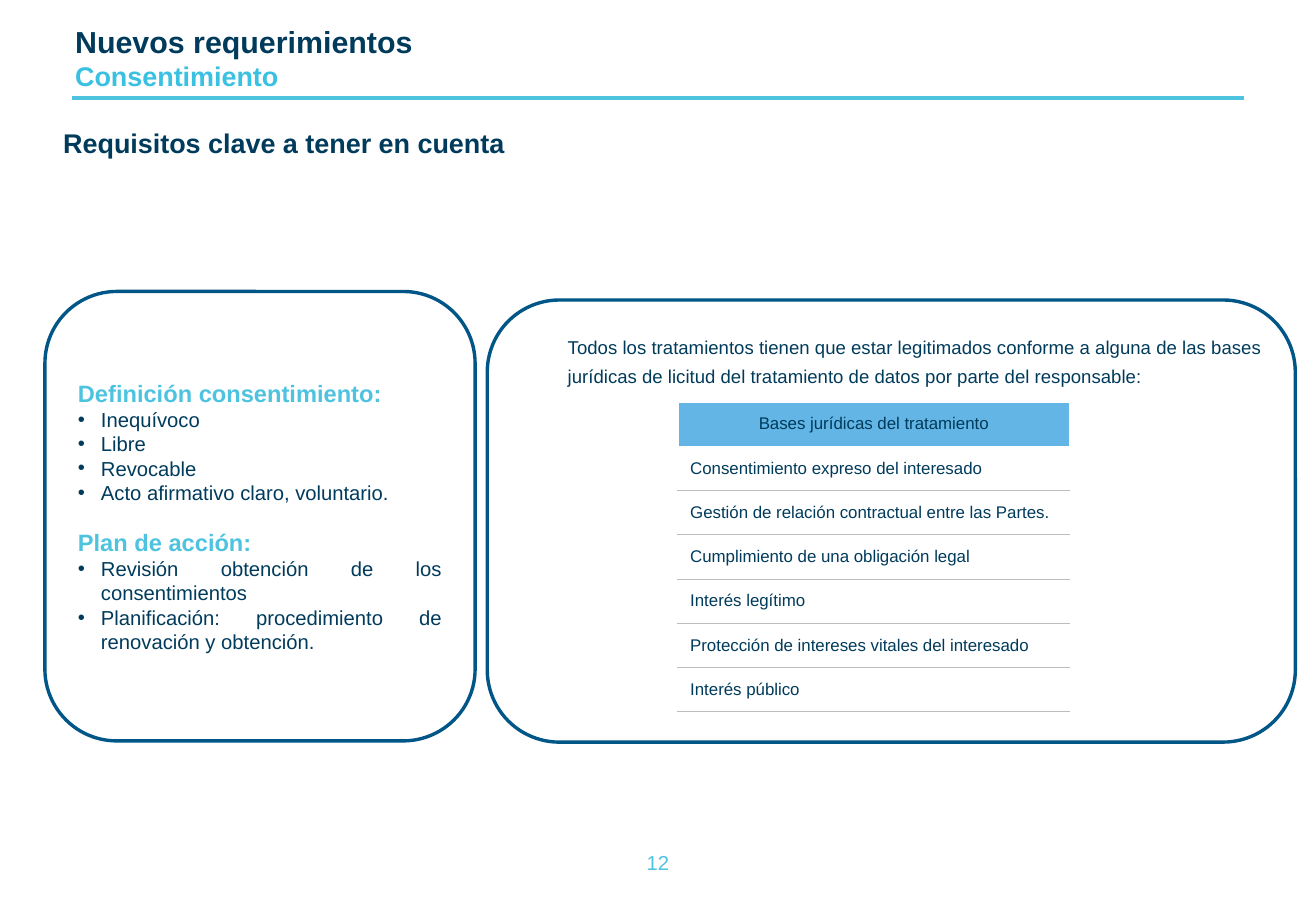
from lxml import etree
from pptx import Presentation
from pptx.dml.color import RGBColor
from pptx.enum.shapes import MSO_CONNECTOR, MSO_SHAPE
from pptx.enum.text import MSO_ANCHOR, PP_ALIGN
from pptx.oxml.ns import qn
from pptx.util import Inches, Pt

LEFT, CENTER, JUSTIFY = PP_ALIGN.LEFT, PP_ALIGN.CENTER, PP_ALIGN.JUSTIFY
TOP, MIDDLE, BOTTOM = MSO_ANCHOR.TOP, MSO_ANCHOR.MIDDLE, MSO_ANCHOR.BOTTOM
ROUND_RECT, STRAIGHT = MSO_SHAPE.ROUNDED_RECTANGLE, MSO_CONNECTOR.STRAIGHT

COLORS = {"navy": "003B5C", "cyan": "4EC3E0", "subtitle": "3AC1E1", "outline": "005686",
          "header": "62B5E5", "rule": "BBBCBC", "white": "FFFFFF"}
FONT = "Arial"


def rgb(name):
    return RGBColor.from_string(COLORS[name])


class SlideBuilder:
    def __init__(self, slide):
        self.s = slide

    def indent(self, p, left, hanging=0, bullet=None):
        pPr = p._p.get_or_add_pPr()
        pPr.set("marL", str(Inches(left)))
        pPr.set("indent", str(-Inches(hanging)))
        if bullet:
            etree.SubElement(pPr, qn("a:buFont")).set("typeface", FONT)
            etree.SubElement(pPr, qn("a:buChar")).set("char", bullet)

    def set_text(self, p, text, size, color="navy", bold=False, align=LEFT):
        p.text = text
        p.alignment = align
        for r in p.runs:
            r.font.name = FONT
            r.font.size = Pt(size)
            r.font.bold = bold
            r.font.color.rgb = rgb(color)

    def paragraphs(self, tf, count):
        return [tf.paragraphs[0]] + [tf.add_paragraph() for _ in range(count - 1)]

    def text(self, box, lines, anchor=TOP, inset=None, align=LEFT):
        tf = self.s.shapes.add_textbox(*map(Inches, box)).text_frame
        tf.word_wrap = True
        tf.vertical_anchor = anchor
        if inset is not None:
            tf.margin_left = tf.margin_right = tf.margin_top = tf.margin_bottom = Inches(inset)
        for p, line in zip(self.paragraphs(tf, len(lines)), lines):
            self.set_text(p, *line, align=align)

    def rule(self, left, right, y):
        line = self.s.shapes.add_connector(STRAIGHT, *map(Inches, (left, y, right, y)))
        line.line.color.rgb = rgb("cyan")
        line.line.width = Pt(2.25)
        etree.SubElement(line._element.spPr, qn("a:effectLst"))

    def panel(self, box, radius, anchor):
        sp = self.s.shapes.add_shape(ROUND_RECT, *map(Inches, box))
        sp.shadow.inherit = False
        sp.adjustments[0] = radius
        sp.fill.solid()
        sp.fill.fore_color.rgb = rgb("white")
        sp.line.color.rgb = rgb("outline")
        sp.line.width = Pt(2)
        tf = sp.text_frame
        tf.word_wrap = True
        tf.vertical_anchor = anchor
        return tf

    def sections(self, tf, sections):
        lines = [(text, i == 0) for title, items in sections
                 for i, text in enumerate([title] + items)]
        for n, (p, (text, heading)) in enumerate(zip(self.paragraphs(tf, len(lines)), lines)):
            if heading:
                self.set_text(p, text, 14, "cyan", True, JUSTIFY)
                if n:
                    p.space_before = Pt(14)
            else:
                self.indent(p, 0.19, 0.19, "•")
                self.set_text(p, text, 12, align=JUSTIFY)

    def border(self, cell, side):
        ln = etree.SubElement(cell._tc.get_or_add_tcPr(), qn("a:" + side), w=str(Pt(0.5)))
        fill = etree.SubElement(ln, qn("a:solidFill"))
        etree.SubElement(fill, qn("a:srgbClr")).set("val", COLORS["rule"])

    def table(self, box, rows):
        table = self.s.shapes.add_table(len(rows), 1, *map(Inches, box)).table
        table.first_row = table.horz_banding = False
        for i, text in enumerate(rows):
            table.rows[i].height = Inches(box[3] / len(rows))
            cell = table.cell(i, 0)
            cell.vertical_anchor = MIDDLE
            cell.margin_left = cell.margin_right = Inches(0.1)
            self.set_text(cell.text_frame.paragraphs[0], text, 10, align=LEFT if i else CENTER)
            if i > 1:
                self.border(cell, "lnT")
            if i:
                self.border(cell, "lnB")
                cell.fill.background()
            else:
                cell.fill.solid()
                cell.fill.fore_color.rgb = rgb("header")


def main():
    prs = Presentation()
    prs.slide_width, prs.slide_height = Inches(10.83), Inches(7.5)
    b = SlideBuilder(prs.slides.add_slide(prs.slide_layouts[6]))

    b.rule(0.59, 10.24, 0.81)
    b.text((4.15, 6.95, 2.53, 0.4), [("12", 12, "cyan")], align=CENTER)
    b.text((0.52, 0.24, 9.84, 0.57),
           [("Nuevos requerimientos", 18, "navy", True),
            ("Consentimiento", 16, "subtitle", True)], anchor=BOTTOM)
    b.text((0.52, 1.04, 3.81, 0.27),
           [("Requisitos clave a tener en cuenta", 16, "navy", True)], inset=0)

    tf = b.panel((4.01, 2.47, 6.65, 3.64), 0.163, TOP)
    tf.margin_top = Inches(0.07)
    p = tf.paragraphs[0]
    b.indent(p, 0.39)
    b.set_text(p, "Todos los tratamientos tienen que estar legitimados conforme a alguna de las "
                  "bases jurídicas de licitud del tratamiento de datos por parte del responsable:",
               11, align=JUSTIFY)
    p.line_spacing = 1.3

    b.table((5.58, 3.31, 3.22, 2.55),
            ["Bases jurídicas del tratamiento",
             "Consentimiento expreso del interesado",
             "Gestión de relación contractual entre las Partes.",
             "Cumplimiento de una obligación legal",
             "Interés legítimo",
             "Protección de intereses vitales del interesado",
             "Interés público"])

    tf = b.panel((0.37, 2.4, 3.54, 3.7), 0.167, MIDDLE)
    b.sections(tf, [
        ("Definición consentimiento:",
         ["Inequívoco", "Libre", "Revocable", "Acto afirmativo claro, voluntario."]),
        ("Plan de acción:",
         ["Revisión obtención de los consentimientos",
          "Planificación: procedimiento de renovación y obtención."]),
    ])
    prs.save("out.pptx")


if __name__ == "__main__":
    main()
